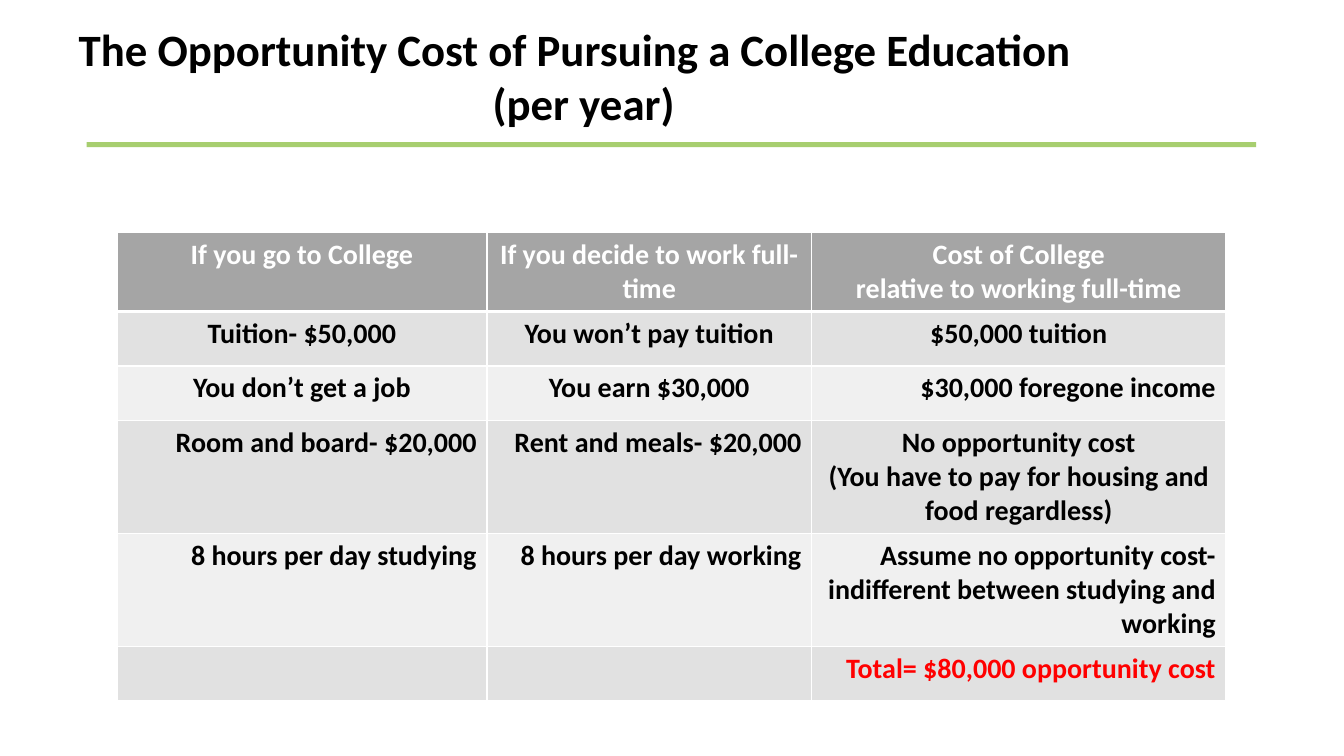
from lxml import etree
from pptx import Presentation
from pptx import util as u
from pptx.dml import color as c
from pptx.enum import shapes, text
from pptx.oxml import ns

HUES = {"rule": "A7CE6F", "head": "A5A5A5", "dark": "E1E1E1", "light": "F0F0F0",
        "white": "FFFFFF", "black": "000000", "red": "FF0000"}
LEFT, MID, RIGHT = text.PP_ALIGN.LEFT, text.PP_ALIGN.CENTER, text.PP_ALIGN.RIGHT


def style(par, size, hue, align):
    par.alignment = align
    par.font.name = "Calibri"
    par.font.size = u.Pt(size)
    par.font.bold = True
    par.font.color.rgb = c.RGBColor.from_string(HUES[hue])


def edge(cell, hue, widths):
    props = cell._tc.get_or_add_tcPr()
    for i, (side, width) in enumerate(widths.items()):
        line = etree.Element(ns.qn("a:ln" + side), w=str(u.Pt(width)))
        fill = etree.SubElement(line, ns.qn("a:solidFill"))
        etree.SubElement(fill, ns.qn("a:srgbClr"), val=HUES[hue])
        props.insert(i, line)


deck = Presentation()
deck.slide_width, deck.slide_height = u.Inches(13.33), u.Inches(7.5)
slide = deck.slides.add_slide(deck.slide_layouts[5])

# Green rule under the title
rule = slide.shapes.add_shape(shapes.MSO_SHAPE.RECTANGLE, u.Inches(0.86),
                              u.Inches(1.41), u.Inches(11.6), u.Inches(0.05))
rule.shadow.inherit = False
rule.fill.solid()
rule.fill.fore_color.rgb = c.RGBColor.from_string(HUES["rule"])
rule.line.fill.background()

# Title
title = slide.shapes.title
title.left, title.top = u.Inches(0.73), u.Inches(0.17)
title.width, title.height = u.Inches(10.12), u.Inches(1.18)
frame = title.text_frame
frame.margin_left = frame.margin_right = u.Inches(0.05)
frame.margin_top = frame.margin_bottom = u.Inches(0.05)
frame.vertical_anchor = text.MSO_ANCHOR.TOP
frame.auto_size = text.MSO_AUTO_SIZE.NONE
frame.word_wrap = True
frame.text = "The Opportunity Cost of Pursuing a College Education\n(per year)"
for par, align in zip(frame.paragraphs, (LEFT, MID)):
    style(par, 32, "black", align)

# Cost table: each cell is its words and alignment
rows = [
    [("If you go to College", MID), ("If you decide to work full-time", MID),
     ("Cost of College\nrelative to working full-time", MID)],
    [("Tuition- $50,000", MID), ("You won’t pay tuition", MID),
     ("$50,000 tuition", MID)],
    [("You don’t get a job", MID), ("You earn $30,000", MID),
     ("$30,000 foregone income", RIGHT)],
    [("Room and board- $20,000", RIGHT), ("Rent and meals- $20,000", RIGHT),
     ("No opportunity cost\n(You have to pay for housing and food regardless)", MID)],
    [("8 hours per day studying", RIGHT), ("8 hours per day working", RIGHT),
     ("Assume no opportunity cost- indifferent between studying and working", RIGHT)],
    [("", RIGHT), ("", RIGHT), ("Total= $80,000 opportunity cost", RIGHT)],
]
widths = [3.67, 3.22, 4.11]
heights = [0.66, 0.54, 0.54, 0.66, 0.66, 0.54]
table = slide.shapes.add_table(len(rows), len(widths), u.Inches(1.16), u.Inches(2.31),
                               u.Inches(sum(widths)), u.Inches(sum(heights))).table
for col, width in zip(table.columns, widths):
    col.width = u.Inches(width)

for i, (row, height) in enumerate(zip(rows, heights)):
    table.rows[i].height = u.Inches(height)
    band = "head" if i == 0 else "dark" if i % 2 else "light"
    hue = "white" if i == 0 else "red" if i == len(rows) - 1 else "black"
    for j, (words, align) in enumerate(row):
        cell = table.cell(i, j)
        cell.fill.solid()
        cell.fill.fore_color.rgb = c.RGBColor.from_string(HUES[band])
        edge(cell, "white", {"L": 1, "R": 1, "T": 3 if i == 1 else 1,
                             "B": 3 if i == 0 else 1})
        cell.text = words
        for par in cell.text_frame.paragraphs:
            style(par, 20, hue, align)

deck.save("out.pptx")
